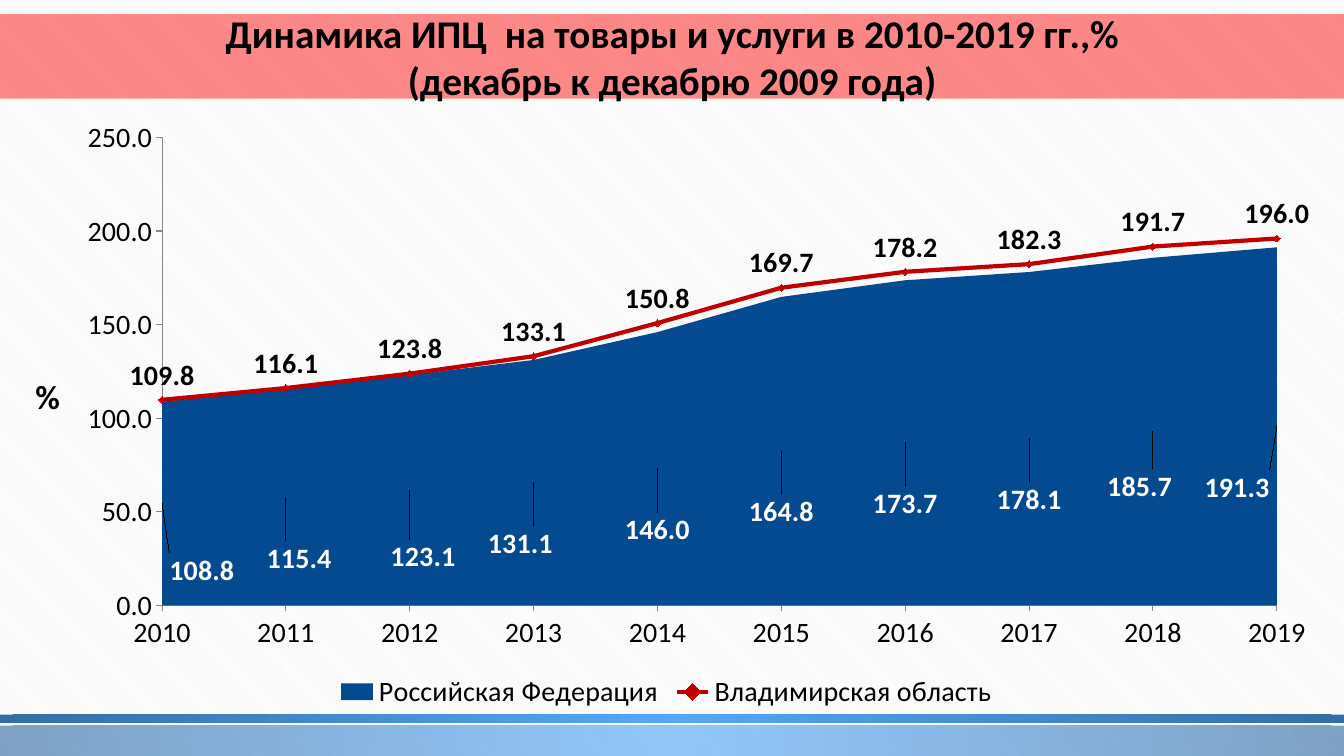
from copy import deepcopy
from dataclasses import dataclass

from pptx import Presentation
from pptx.chart.chart import Chart
from pptx.chart.data import CategoryChartData
from pptx.dml.color import RGBColor
from pptx.enum.chart import XL_CHART_TYPE, XL_LABEL_POSITION, XL_LEGEND_POSITION, XL_MARKER_STYLE, XL_TICK_MARK
from pptx.enum.dml import MSO_PATTERN
from pptx.enum.shapes import MSO_SHAPE
from pptx.enum.text import MSO_ANCHOR, MSO_AUTO_SIZE, PP_ALIGN
from pptx.oxml import parse_xml
from pptx.oxml.ns import nsdecls, qn
from pptx.slide import Slide
from pptx.util import Pt

AREA = XL_CHART_TYPE.AREA
LABEL_ABOVE = XL_LABEL_POSITION.ABOVE
LEGEND_BOTTOM = XL_LEGEND_POSITION.BOTTOM
DIAMOND = XL_MARKER_STYLE.DIAMOND
TICK_OUTSIDE = XL_TICK_MARK.OUTSIDE
TICK_NONE = XL_TICK_MARK.NONE
DIAGONAL = MSO_PATTERN.DARK_DOWNWARD_DIAGONAL
RECTANGLE = MSO_SHAPE.RECTANGLE
MIDDLE = MSO_ANCHOR.MIDDLE
NO_AUTO_SIZE = MSO_AUTO_SIZE.NONE
CENTER = PP_ALIGN.CENTER

FONT = "Calibri"
COLORS = {
    "black": "000000", "white": "FFFFFF", "stripe": "E9E7E7", "banner": "FF0000",
    "light_blue": "2A93FB", "blue": "034A90", "red": "C00000", "axis": "868686",
}
SLIDE_WIDTH = 960
NUMBER_FORMAT = "0.0"
TITLE_LINES = ["Динамика ИПЦ  на товары и услуги в 2010-2019 гг.,%", "(декабрь к декабрю 2009 года)"]
YEARS = [str(year) for year in range(2010, 2020)]
RUSSIA = [108.8, 115.4, 123.1, 131.1, 146.0, 164.8, 173.7, 178.1, 185.7, 191.3]
VLADIMIR = [109.8, 116.1, 123.8, 133.1, 150.8, 169.7, 178.2, 182.3, 191.7, 196.0]
RUSSIA_LABEL_SHIFTS = [
    (0.03, 0.11), (0.01, 0.1), (0.01, 0.11), (-0.01, 0.1), (0, 0.1),
    (0, 0.1), (0, 0.1), (0, 0.1), (-0.01, 0.09), (-0.03, 0.1),
]


@dataclass
class Band:
    top: float
    height: float
    opacity: int


BANDS = [Band(518.4, 21.6, 50), Band(510.5, 5.8, 80)]


def color(name: str) -> RGBColor:
    return RGBColor.from_string(COLORS[name])


def format_font(font, *, size: float = 20, bold: bool = False, color_name: str = "black") -> None:
    font.name = FONT
    font.size = Pt(size)
    font.bold = bold
    font.color.rgb = color(color_name)


def draw_band(slide: Slide, band: Band) -> None:
    shape = slide.shapes.add_shape(RECTANGLE, 0, Pt(band.top), Pt(SLIDE_WIDTH), Pt(band.height))
    shape.shadow.inherit = False
    shape.line.fill.background()
    stops = "".join(
        f'<a:gs pos="{position}"><a:srgbClr val="{COLORS[name]}">'
        f'<a:alpha val="{band.opacity * 1000}"/></a:srgbClr></a:gs>'
        for position, name in [(0, "light_blue"), (100000, "blue")]
    )
    gradient = parse_xml(
        f'<a:gradFill {nsdecls("a")}><a:gsLst>{stops}</a:gsLst><a:path path="circle">'
        '<a:fillToRect l="50000" t="50000" r="50000" b="50000"/></a:path></a:gradFill>'
    )
    shape._element.spPr.find(qn("a:prstGeom")).addnext(gradient)


def draw_title(slide: Slide) -> None:
    title = slide.shapes.title
    title.left, title.top, title.width, title.height = 0, Pt(10), Pt(SLIDE_WIDTH), Pt(60.5)
    title.fill.solid()
    title.fill.fore_color.rgb = color("banner")
    fill_color = title._element.spPr.find(qn("a:solidFill"))[0]
    fill_color.append(parse_xml(f'<a:alpha {nsdecls("a")} val="46000"/>'))
    frame = title.text_frame
    frame.text = "\n".join(TITLE_LINES)
    frame.auto_size = NO_AUTO_SIZE
    frame.vertical_anchor = MIDDLE
    for paragraph in frame.paragraphs:
        paragraph.alignment = CENTER
        format_font(paragraph.runs[0].font, size=28, bold=True)


def manual_layout(x: float, y: float, *, width: float = 0, height: float = 0, edge: bool = False):
    target = '<c:layoutTarget val="inner"/>' if width else ""
    modes = '<c:xMode val="edge"/><c:yMode val="edge"/>' if edge else ""
    size = f'<c:w val="{width}"/><c:h val="{height}"/>' if width else ""
    return parse_xml(
        f'<c:layout {nsdecls("c")}><c:manualLayout>{target}{modes}'
        f'<c:x val="{x}"/><c:y val="{y}"/>{size}</c:manualLayout></c:layout>'
    )


def replace_layout(parent, layout, position: int) -> None:
    for existing in parent.findall(qn("c:layout")):
        parent.remove(existing)
    parent.insert(position, layout)


def move_last_series_to_line(chart: Chart) -> None:
    area = chart._chartSpace.find(".//" + qn("c:areaChart"))
    line = parse_xml(
        f'<c:lineChart {nsdecls("c")}><c:grouping val="standard"/><c:varyColors val="0"/>'
        '<c:marker val="1"/></c:lineChart>'
    )
    line.insert(2, area.findall(qn("c:ser"))[-1])
    for axis_id in area.findall(qn("c:axId")):
        line.append(deepcopy(axis_id))
    area.addnext(line)


def format_series_labels(series, color_name: str) -> None:
    labels = series.data_labels
    labels.show_value = True
    labels.number_format = NUMBER_FORMAT
    labels.number_format_is_linked = False
    format_font(labels.font, bold=True, color_name=color_name)


def format_axes(chart: Chart) -> None:
    for axis in (chart.category_axis, chart.value_axis):
        axis.has_major_gridlines = False
        axis.major_tick_mark = TICK_OUTSIDE
        axis.minor_tick_mark = TICK_NONE
        axis.format.line.color.rgb = color("axis")
        format_font(axis.tick_labels.font)
    axis = chart.value_axis
    axis.minimum_scale, axis.maximum_scale, axis.major_unit = 0, 250, 50
    axis.tick_labels.number_format = NUMBER_FORMAT
    axis.tick_labels.number_format_is_linked = False
    axis._element.find(qn("c:crossBetween")).set("val", "midCat")
    frame = axis.axis_title.text_frame
    frame.text = "%"
    frame._txBody.find(qn("a:bodyPr")).set("rot", "0")
    format_font(frame.paragraphs[0].runs[0].font, size=24, bold=True)
    replace_layout(axis.axis_title._element, manual_layout(0.02, 0.43, edge=True), 1)


def draw_chart(slide: Slide) -> None:
    data = CategoryChartData(number_format=NUMBER_FORMAT)
    data.categories = YEARS
    data.add_series("Российская Федерация", RUSSIA)
    data.add_series("Владимирская область", VLADIMIR)
    frame = slide.shapes.add_chart(AREA, Pt(2), Pt(76.5), Pt(948), Pt(434), data)
    chart = frame.chart
    chart.has_title = False
    format_font(chart.font)
    chart.has_legend = True
    chart.legend.position = LEGEND_BOTTOM
    chart.legend.include_in_layout = False
    format_font(chart.legend.font)
    move_last_series_to_line(chart)
    format_axes(chart)
    plot_area = chart._chartSpace.find(".//" + qn("c:plotArea"))
    replace_layout(plot_area, manual_layout(0.12, 0.05, width=0.84, height=0.77, edge=True), 0)

    area_plot, line_plot = chart.plots
    area_plot.vary_by_categories = False
    russia, vladimir = area_plot.series[0], line_plot.series[0]
    russia.format.fill.solid()
    russia.format.fill.fore_color.rgb = color("blue")
    format_series_labels(russia, "white")
    for index, shift in enumerate(RUSSIA_LABEL_SHIFTS):
        format_font(russia.points[index].data_label.font, bold=True, color_name="white")
    for label, shift in zip(russia._element.iter(qn("c:dLbl")), RUSSIA_LABEL_SHIFTS):
        label.insert(1, manual_layout(*shift))

    vladimir.smooth = False
    vladimir.format.line.color.rgb = color("red")
    vladimir.format.line.width = Pt(3)
    vladimir.marker.style = DIAMOND
    vladimir.marker.size = 5
    vladimir.marker.format.fill.solid()
    vladimir.marker.format.fill.fore_color.rgb = color("red")
    vladimir.marker.format.line.color.rgb = color("red")
    format_series_labels(vladimir, "black")
    vladimir.data_labels.position = LABEL_ABOVE


def main() -> None:
    presentation = Presentation()
    presentation.slide_width, presentation.slide_height = Pt(SLIDE_WIDTH), Pt(540)
    slide = presentation.slides.add_slide(presentation.slide_layouts[5])
    background = slide.background.fill
    background.patterned()
    background.pattern = DIAGONAL
    background.fore_color.rgb = color("stripe")
    background.back_color.rgb = color("white")
    for band in BANDS:
        draw_band(slide, band)
    draw_title(slide)
    draw_chart(slide)
    presentation.save("out.pptx")


if __name__ == "__main__":
    main()
